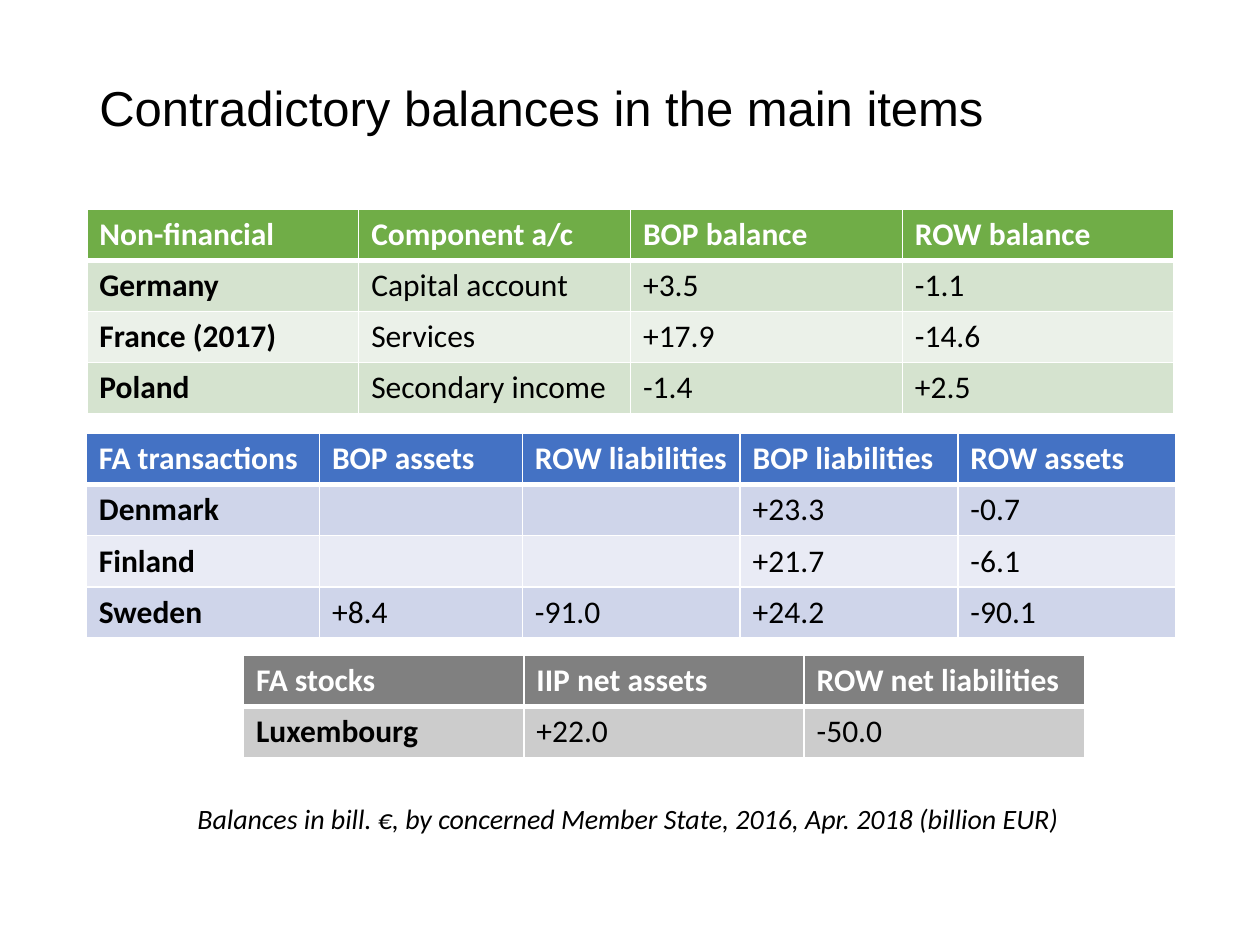
import pptx
import pptx.dml.color
import pptx.enum.text
import pptx.oxml
import pptx.oxml.ns
import pptx.util
from pptx.util import Cm

COLORS = {
    "text": "000000",
    "white": "FFFFFF",
    "green": "70AD47",
    "green_dark": "D5E3CF",
    "green_light": "EBF1E9",
    "blue": "4472C4",
    "blue_dark": "CFD5EA",
    "blue_light": "E9EBF5",
    "grey": "808080",
    "grey_dark": "CCCCCC",
    "grey_light": "E7E7E7",
}
ROW_HEIGHT = 1.03

NON_FINANCIAL = [
    ["Non-financial", "Component a/c", "BOP balance", "ROW balance"],
    ["Germany", "Capital account", "+3.5", "-1.1"],
    ["France (2017)", "Services", "+17.9", "-14.6"],
    ["Poland", "Secondary income", "-1.4", "+2.5"],
]
TRANSACTIONS = [
    ["FA transactions", "BOP assets", "ROW liabilities", "BOP liabilities", "ROW assets"],
    ["Denmark", "", "", "+23.3", "-0.7"],
    ["Finland", "", "", "+21.7", "-6.1"],
    ["Sweden", "+8.4", "-91.0", "+24.2", "-90.1"],
]
STOCKS = [
    ["FA stocks", "IIP net assets", "ROW net liabilities"],
    ["Luxembourg", "+22.0", "-50.0"],
]


def rgb(name):
    return pptx.dml.color.RGBColor.from_string(COLORS[name])


def style_font(font, name, size, color, bold=False, italic=False):
    font.name = name
    font.size = pptx.util.Pt(size)
    font.color.rgb = rgb(color)
    font.bold = bold
    font.italic = italic


def add_borders(cell, row_index):
    widths = {
        "lnL": 1,
        "lnR": 1,
        "lnT": 3 if row_index == 1 else 1,
        "lnB": 3 if row_index == 0 else 1,
    }
    properties = cell._tc.get_or_add_tcPr()
    for position, (side, width) in enumerate(widths.items()):
        border = pptx.oxml.parse_xml(
            f'<a:{side} {pptx.oxml.ns.nsdecls("a")} w="{pptx.util.Pt(width)}">'
            f'<a:solidFill><a:srgbClr val="{COLORS["white"]}"/></a:solidFill></a:{side}>'
        )
        properties.insert(position, border)


def add_title(page, left, top, width, height):
    title = page.shapes.title
    title.left, title.top = Cm(left), Cm(top)
    title.width, title.height = Cm(width), Cm(height)
    frame = title.text_frame
    frame.text = "Contradictory balances in the main items"
    frame.vertical_anchor = pptx.enum.text.MSO_ANCHOR.MIDDLE
    para = frame.paragraphs[0]
    para.alignment = pptx.enum.text.PP_ALIGN.LEFT
    para.line_spacing = 0.9
    style_font(para.runs[0].font, "Arial", 28, "text")


def add_balance_table(page, left, top, widths, rows, theme):
    table = page.shapes.add_table(
        len(rows), len(widths), Cm(left), Cm(top),
        Cm(sum(widths)), Cm(ROW_HEIGHT * len(rows)),
    ).table
    for column, width in zip(table.columns, widths):
        column.width = Cm(width)
    for row_index, values in enumerate(rows):
        table.rows[row_index].height = Cm(ROW_HEIGHT)
        is_header = row_index == 0
        band = "_dark" if row_index % 2 else "_light"
        for column_index, value in enumerate(values):
            cell = table.cell(row_index, column_index)
            cell.fill.solid()
            cell.fill.fore_color.rgb = rgb(theme if is_header else theme + band)
            add_borders(cell, row_index)
            cell.text_frame.text = value
            for span in cell.text_frame.paragraphs[0].runs:
                style_font(
                    span.font, "Calibri", 18, "white" if is_header else "text",
                    bold=is_header or column_index == 0,
                )


def add_note(page, left, top, width, height):
    box = page.shapes.add_textbox(Cm(left), Cm(top), Cm(width), Cm(height))
    frame = box.text_frame
    frame.word_wrap = True
    frame.auto_size = pptx.enum.text.MSO_AUTO_SIZE.SHAPE_TO_FIT_TEXT
    frame.text = (
        "Balances in bill. €, by concerned Member State, 2016, Apr. 2018 (billion EUR)"
    )
    para = frame.paragraphs[0]
    para.level = 1
    properties = para._p.get_or_add_pPr()
    properties.set("marL", str(Cm(1.27)))
    properties.set("indent", "0")
    style_font(para.runs[0].font, "Calibri", 16, "text", italic=True)


def main():
    deck = pptx.Presentation()
    deck.slide_width, deck.slide_height = Cm(25.4), Cm(19.05)
    page = deck.slides.add_slide(deck.slide_layouts[5])
    add_title(page, 1.75, 1.02, 21.9, 2.4)
    add_balance_table(page, 1.75, 4.22, [5.48] * 4, NON_FINANCIAL, "green")
    add_balance_table(page, 1.74, 8.74, [4.7, 4.09] + [4.39] * 3, TRANSACTIONS, "blue")
    add_balance_table(page, 4.91, 13.21, [5.65] * 3, STOCKS, "grey")
    add_note(page, 2.46, 16.03, 21.87, 0.94)
    deck.save("out.pptx")


if __name__ == "__main__":
    main()
